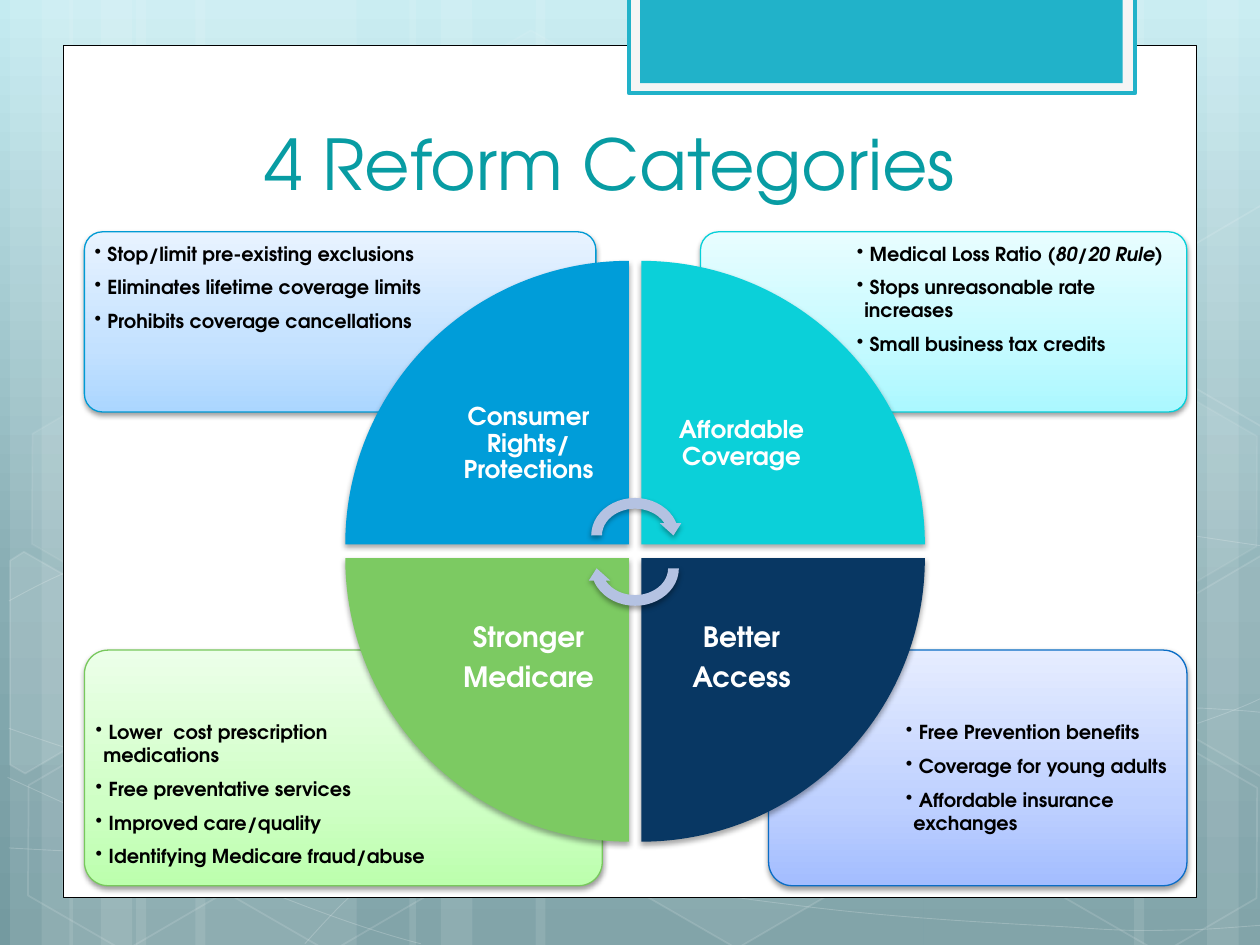
from lxml.etree import SubElement
from pptx import Presentation
from pptx.dml.color import RGBColor
from pptx.enum.shapes import MSO_SHAPE as Shape
from pptx.enum.text import MSO_ANCHOR as Anchor, MSO_AUTO_SIZE as AutoSize, PP_ALIGN as Align
from pptx.oxml.ns import qn
from pptx.util import Inches, Pt

FONT = "TeX Gyre Adventor"
WHITE = "FFFFFF"
STRIPES = [(1.08, 1.75, 0), (0.08, 0.5, 0), (0.33, 0.83, 0), (1.55, 1.75, 0), (0.55, 0.5, 0),
           (0.8, 0.83, 0), (7.33, 1.75, 180), (9.58, 0.5, 180), (9, 0.83, 180),
           (4.25, 3.08, 0), (3.25, 0.5, 0), (3.5, 0.83, 0)]
WAVES = [
    [(0.07, 6.73), (0.61, 6.76), (1.15, 6.79), (1.9, 6.78), (2.65, 6.77), (3.58, 6.75), (4.58, 6.65),
     (5.58, 6.55), (7, 6.36), (7.92, 6.17), (8.83, 5.98), (9.77, 5.68), (10.07, 5.51)],
    [(0.07, 4.77), (0.36, 4.61), (0.65, 4.46), (1.21, 4.31), (1.78, 4.16), (2.59, 3.94), (3.47, 3.87),
     (4.36, 3.8), (5.44, 3.79), (6.54, 3.87), (7.64, 3.95), (9.47, 4.26), (10.07, 4.34)],
    [(0.06, 6.17), (1.27, 6.72), (2.47, 7.27), (3.34, 7.49)],
    [(0.07, 5.78), (0.38, 5.89), (0.7, 6), (1.28, 6.16), (1.86, 6.31), (2.73, 6.56), (3.57, 6.73),
     (4.4, 6.9), (5.45, 7.08), (6.28, 7.18), (7.11, 7.29), (8, 7.33), (8.53, 7.36),
     (9.05, 7.4), (9.19, 7.38), (9.45, 7.38), (9.71, 7.37), (9.89, 7.35), (10.07, 7.34)],
    [(2.42, 7.49), (2.6, 7.29), (2.78, 7.09), (3.02, 6.91), (3.26, 6.73), (3.6, 6.53), (3.88, 6.39),
     (4.16, 6.25), (4.33, 6.19), (4.7, 6.09), (5.06, 5.99), (5.73, 5.85), (6.08, 5.78),
     (6.44, 5.71), (6.49, 5.71), (6.8, 5.69), (7.11, 5.66), (7.6, 5.63), (7.94, 5.62),
     (8.29, 5.61), (8.86, 5.62), (8.86, 5.62), (9.08, 5.62), (9.3, 5.62), (9.53, 5.62),
     (9.71, 5.63), (9.88, 5.64), (9.97, 5.65), (10.06, 5.66), (10.03, 5.65), (10.06, 5.66)],
]
HEXAGONS = [(3.34, 0.36, 4, 8), (4.97, 5.89, 6, 12), (0.11, 5.91, 0, 12), (0.14, 3.12, 7, 8),
            (1.74, 5.92, 0, 12), (7.53, 4.53, 10, 12), (8.34, 5.93, 0, 12), (8.34, 3.14, 7, 8)]
CUT_HEXAGONS = [
    ([(0.08, 4.45), (0.19, 4.38), (0.96, 4.82), (0.95, 5.7), (0.2, 6.14), (0.08, 6.07)], 10),
    ([(9.26, 4.85), (10.01, 4.41), (10.09, 4.46), (10.09, 6.13), (10.02, 6.17), (9.26, 5.73)], 4),
    ([(9.26, 2.07), (10.01, 1.63), (10.1, 1.68), (10.09, 3.35), (10.02, 3.39), (9.26, 2.95)], 0),
]
CARDS = [
    ((6.1, 5.16, 3.32, 1.87), (7.14, 5.67, 2.24, 1.32), ("A3BDFF", "BED0FF", "E6EDFF"), "0A6DC6",
     ["Free Prevention benefits", "Coverage for young adults", "Affordable insurance exchanges"]),
    ((0.67, 5.16, 4.11, 1.87), (0.71, 5.67, 2.79, 1.32), ("BCFFAD", "CFFFC5", "ECFFE9"), "78C85D",
     ["Lower  cost prescription medications", "Free preventative services",
      "Improved care/quality", "Identifying Medicare fraud/abuse"]),
    ((5.56, 1.84, 3.86, 1.43), (6.75, 1.87, 2.64, 1.01), ("ABF8FF", "C3FAFF", "E8FDFF"), "06D0D9",
     ["Medical Loss Ratio |(80/20 Rule)", "Stops unreasonable rate increases",
      "Small business tax credits"]),
    ((0.67, 1.84, 4.06, 1.43), (0.7, 1.87, 2.78, 1.01), ("ABD6FF", "C3E1FF", "E8F3FF"), "009AD4",
     ["Stop/limit pre-existing exclusions", "Eliminates lifetime coverage limits",
      "Prohibits coverage cancellations"]),
]
WEDGES = [(0, 0, 0, "009DD9", 14, ["Consumer Rights/ Protections"]),
          (1, 0, 90, "0BD0D9", 14, ["Affordable Coverage"]),
          (1, 1, 180, "083763", 16, ["Better", "Access"]),
          (0, 1, 270, "7CCA62", 16, ["Stronger", "Medicare"])]


def color(value):
    """Turn a hex string into a colour."""
    return RGBColor.from_string(value)


def add_color(parent, value, opacity=100):
    """Append a colour element with its opacity in percent."""
    element = SubElement(parent, qn("a:srgbClr"), val=value)
    if opacity < 100:
        SubElement(element, qn("a:alpha"), val=str(opacity * 1000))


def style(shape, fill=None, line=None, width=1, fill_opacity=100, line_opacity=100):
    """Set fill and line, each with an opacity in percent, without shadow."""
    shape.shadow.inherit = False
    for part, value, opacity, tags in ((shape.fill, fill, fill_opacity, ["a:solidFill"]),
                                       (shape.line.fill, line, line_opacity, ["a:ln", "a:solidFill"])):
        if not value or not opacity:
            part.background()
            continue
        part.solid()
        part.fore_color.rgb = color(value)
        target = shape.element.spPr.find("/".join(map(qn, tags)))
        target.remove(target[0])
        add_color(target, value, opacity)
    if line:
        shape.line.width = Pt(width)


def add_gradient(owner, stops, angle):
    """Replace the first solid fill in the owner by a linear gradient."""
    solid = owner.find(f".//{qn('a:solidFill')}")
    gradient = solid.makeelement(qn("a:gradFill"), {"rotWithShape": "1"})
    stop_list = SubElement(gradient, qn("a:gsLst"))
    for position, value in stops:
        add_color(SubElement(stop_list, qn("a:gs"), pos=str(position * 1000)), value)
    SubElement(gradient, qn("a:lin"), ang=str(angle * 60000), scaled="0")
    solid.getparent().replace(solid, gradient)


def add_shadow(shape, opacity):
    """Give the shape a soft shadow below it."""
    effects = shape.element.spPr.find(qn("a:effectLst"))
    shadow = SubElement(effects, qn("a:outerShdw"), blurRad=str(Pt(3.1)), dist=str(Pt(1.7)),
                        dir="5400000", rotWithShape="0")
    add_color(shadow, "000000", opacity)


def add_preset(slide, kind, box, rotation=0, **look):
    """Add a preset shape in a box given in inches."""
    shape = slide.shapes.add_shape(kind, *map(Inches, box))
    shape.rotation = rotation
    style(shape, **look)
    return shape


def add_outline(slide, points, close, **look):
    """Add a freeform through points given in inches."""
    points = [(Inches(x), Inches(y)) for x, y in points]
    builder = slide.shapes.build_freeform(*points[0])
    builder.add_line_segments(points[1:], close=close)
    shape = builder.convert_to_shape()
    style(shape, **look)
    return shape


def add_wave(slide, controls):
    """Add a faint chain of cubic curves through control points."""
    shape = add_outline(slide, controls, False, line=WHITE, width=0.5, line_opacity=20)
    outline = shape.element.spPr.find(f".//{qn('a:path')}")
    segments = outline.findall(qn("a:lnTo"))
    for start in range(0, len(segments), 3):
        curve = SubElement(outline, qn("a:cubicBezTo"))
        for segment in segments[start:start + 3]:
            curve.append(segment[0])
            outline.remove(segment)


def add_text(slide, box, lines, size, value, inset, anchor=Anchor.TOP):
    """Add a bold text box, with italics after a bar, and return its paragraphs."""
    frame = slide.shapes.add_textbox(*map(Inches, box)).text_frame
    frame.word_wrap = True
    frame.vertical_anchor = anchor
    frame.margin_left = frame.margin_right = frame.margin_top = frame.margin_bottom = Inches(inset)
    for index, line in enumerate(lines):
        paragraph = frame.add_paragraph() if index else frame.paragraphs[0]
        for part, text in enumerate(line.split("|")):
            run = paragraph.add_run()
            run.text = text
            if part:
                run.font.italic = True
        font = paragraph.font
        font.name, font.size, font.bold, font.color.rgb = FONT, Pt(size), True, color(value)
    return frame.paragraphs


def add_backdrop(slide):
    """Draw the gradient, stripes, waves and hexagons."""
    slide.background.fill.solid()
    slide.background.fill.fore_color.rgb = color(WHITE)
    add_gradient(slide.element, [(0, "C4EBF1"), (62, "88ADB3"), (100, "749AA0")], 90)
    for left, width, rotation in STRIPES:
        add_preset(slide, Shape.RECTANGLE, (left, 0, width, 7.5), rotation, fill=WHITE, fill_opacity=10)
    for wave in WAVES:
        add_wave(slide, wave)
    for left, top, inside, edge in HEXAGONS:
        hexagon = add_preset(slide, Shape.HEXAGON, (left, top, 1.75, 1.52), 30, fill=WHITE,
                             line=WHITE, fill_opacity=inside, line_opacity=edge)
        hexagon.adjustments[0] = 0.285
    for points, inside in CUT_HEXAGONS:
        add_outline(slide, points, True, fill=WHITE, line=WHITE, fill_opacity=inside, line_opacity=12)


def add_panel(slide):
    """Draw the white panel and the tab at its top."""
    add_preset(slide, Shape.RECTANGLE, (0.5, 0.36, 9, 6.76), fill=WHITE, line="000000", width=0.5)
    add_preset(slide, Shape.RECTANGLE, (4.99, -0.02, 4.02, 0.76), fill="F5F5F5", line="21B2C9", width=2.25)
    add_preset(slide, Shape.RECTANGLE, (5.08, -0.02, 3.83, 0.68), fill="21B2C9")


def add_title(slide, text):
    """Fill the title placeholder and bring it to the front."""
    title = slide.shapes.title
    title.left, title.top, title.width, title.height = map(Inches, (0.75, 0.75, 8.18, 0.92))
    frame = title.text_frame
    frame.text, frame.vertical_anchor, frame.auto_size = text, Anchor.BOTTOM, AutoSize.NONE
    paragraph = frame.paragraphs[0]
    paragraph.alignment = Align.CENTER
    font = paragraph.font
    font.name, font.size, font.color.rgb = FONT, Pt(40), color("089CA3")
    title.element.getparent().append(title.element)


def add_card(slide, box, text_box, shades, edge, items):
    """Add a rounded gradient card with its bullet list."""
    card = add_preset(slide, Shape.ROUNDED_RECTANGLE, box, fill=WHITE, line=edge, width=0.75)
    card.adjustments[0] = 0.1
    add_gradient(card.element.spPr, zip((0, 35, 100), shades), 270)
    add_shadow(card, 38)
    for paragraph in add_text(slide, text_box, [f" {item}" for item in items], 11, "000000", 0.05):
        paragraph.level = 1
        paragraph.space_after = Pt(6)
        properties = paragraph._p.get_or_add_pPr()
        properties.set("marL", str(Inches(0.06)))
        properties.set("indent", str(-Inches(0.06)))
        bullet = properties.makeelement(qn("a:buChar"), {"char": "••"})
        properties.find(qn("a:defRPr")).addprevious(bullet)


def add_wedge(slide, column, row, rotation, fill, size, lines):
    """Add a quarter of the wheel with its label."""
    wedge = add_preset(slide, Shape.PIE_WEDGE, (2.74 + 2.35 * column, 2.07 + 2.36 * row, 2.25, 2.25),
                       rotation, fill=fill)
    add_shadow(wedge, 35)
    label = (3.4 + 1.69 * column, 2.73 + 1.7 * row, 1.59, 1.59)
    for paragraph in add_text(slide, label, lines, size, WHITE, 0.11, Anchor.MIDDLE):
        paragraph.alignment = Align.CENTER
        paragraph.line_spacing = 0.9
        paragraph.space_after = Pt(0.35 * size)


def main():
    """Build and save the slide."""
    presentation = Presentation()
    presentation.slide_width, presentation.slide_height = Inches(10), Inches(7.5)
    slide = presentation.slides.add_slide(presentation.slide_layouts[5])
    add_backdrop(slide)
    add_panel(slide)
    add_title(slide, "4 Reform Categories")
    for card in CARDS:
        add_card(slide, *card)
    for wedge in WEDGES:
        add_wedge(slide, *wedge)
    for top, rotation in ((3.91, 0), (4.17, 180)):
        arrow = add_preset(slide, Shape.CIRCULAR_ARROW, (4.65, top, 0.78, 0.68), rotation, fill="B4C2E2")
        add_shadow(arrow, 35)
    presentation.save("out.pptx")


if __name__ == "__main__":
    main()
